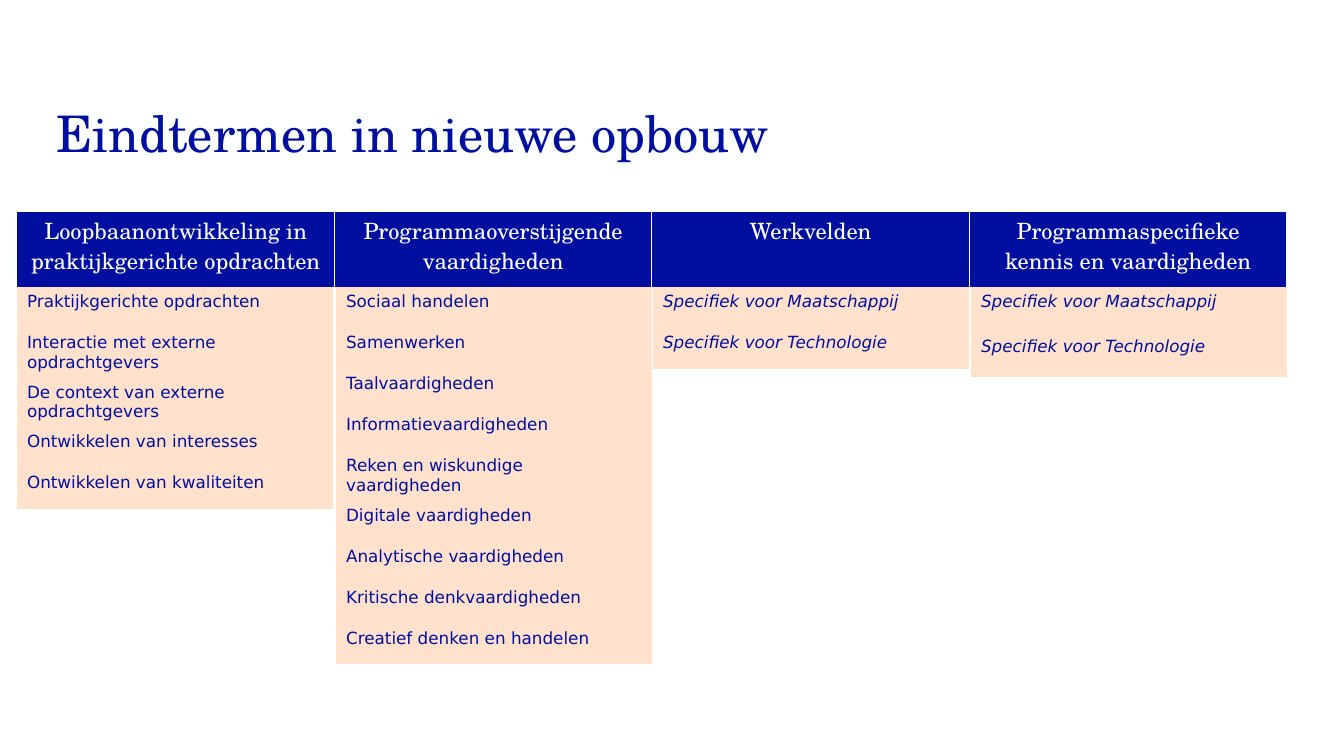
"""Build the slide with the attainment targets in their new structure."""
from lxml import etree
from pptx import Presentation, util as u
from pptx.dml.color import RGBColor
from pptx.enum import text
from pptx.oxml.ns import qn

TITLE = "Eindtermen in nieuwe opbouw"
HEADS = [
    "Loopbaanontwikkeling in praktijkgerichte opdrachten",
    "Programmaoverstijgende\vvaardigheden",
    "Werkvelden",
    "Programmaspecifieke\vkennis en vaardigheden",
]
FIELDS = ["Specifiek voor Maatschappij", "Specifiek voor Technologie"]
LISTS = [
    {"left": 17, "row": 41, "italic": False, "items": [
        "Praktijkgerichte opdrachten",
        "Interactie met externe opdrachtgevers",
        "De context van externe opdrachtgevers",
        "Ontwikkelen van interesses",
        "Ontwikkelen van kwaliteiten",
    ]},
    {"left": 336, "row": 41, "italic": False, "items": [
        "Sociaal handelen",
        "Samenwerken",
        "Taalvaardigheden",
        "Informatievaardigheden",
        "Reken en wiskundige vaardigheden",
        "Digitale vaardigheden",
        "Analytische vaardigheden",
        "Kritische denkvaardigheden",
        "Creatief denken en handelen",
    ]},
    {"left": 653, "row": 45, "italic": True, "items": FIELDS},
    {"left": 971, "row": 45, "italic": True, "items": FIELDS},
]
LISTS[2]["row"] = 41

COLORS = {"blue": "000FA0", "white": "FEFFFF", "peach": "FFE1CC"}
SERIF, SANS = "TeX Gyre Schola", "DejaVu Sans"
PLAIN = "{2D5ABB26-0587-4C30-8999-92F81FD0307C}"
SCALE = 914400 / 100.8


def px(n):
    return u.Emu(round(n * SCALE))


def rgb(name):
    return RGBColor.from_string(COLORS[name])


def style(frame, color, para, font):
    for p in frame.paragraphs:
        for key, val in para.items():
            setattr(p, key, val)
        for run in p.runs:
            run.font.color.rgb = rgb(color)
            for key, val in font.items():
                setattr(run.font, key, val)


def border(cell):
    props = cell._tc.get_or_add_tcPr()
    for side in ("lnL", "lnR", "lnT", "lnB"):
        line = etree.SubElement(props, qn("a:" + side), w=str(u.Pt(0.83)))
        fill = etree.SubElement(line, qn("a:solidFill"))
        etree.SubElement(fill, qn("a:srgbClr"), val=COLORS["white"])


def grid(slide, rows, box, fill, color, para, font, lined=False):
    frame = slide.shapes.add_table(len(rows), len(rows[0]), *map(px, box))
    table = frame.table
    table.first_row = table.horz_banding = False
    frame._element.find(".//" + qn("a:tableStyleId")).text = PLAIN
    for r, row in enumerate(rows):
        for c, words in enumerate(row):
            cell = table.cell(r, c)
            cell.text = words
            if lined:
                border(cell)
            cell.fill.solid()
            cell.fill.fore_color.rgb = rgb(fill)
            style(cell.text_frame, color, para, font)


def main():
    deck = Presentation()
    deck.slide_width, deck.slide_height = px(1344), px(756)
    slide = deck.slides.add_slide(deck.slide_layouts[5])
    slide.background.fill.solid()
    slide.background.fill.fore_color.rgb = rgb("white")

    title = slide.shapes.title
    place = {"left": 46, "top": 107, "width": 860, "height": 94}
    for key, val in place.items():
        setattr(title, key, px(val))
    frame = title.text_frame
    frame.text = TITLE
    frame.word_wrap = True
    frame.auto_size = text.MSO_AUTO_SIZE.NONE
    frame.vertical_anchor = text.MSO_ANCHOR.TOP
    style(frame, "blue",
          {"alignment": text.PP_ALIGN.LEFT, "line_spacing": u.Pt(36)},
          {"name": SERIF, "size": u.Pt(36)})

    grid(slide, [HEADS], (17, 211, 1270, 76), "blue", "white",
         {"alignment": text.PP_ALIGN.CENTER, "line_spacing": u.Pt(21.8)},
         {"name": SERIF, "size": u.Pt(16)}, lined=True)
    for part in LISTS:
        rows = [[item] for item in part["items"]]
        box = (part["left"], 287, 316, part["row"] * len(rows))
        grid(slide, rows, box, "peach", "blue", {},
             {"name": SANS, "size": u.Pt(12), "italic": part["italic"]})
    deck.save("out.pptx")


if __name__ == "__main__":
    main()
